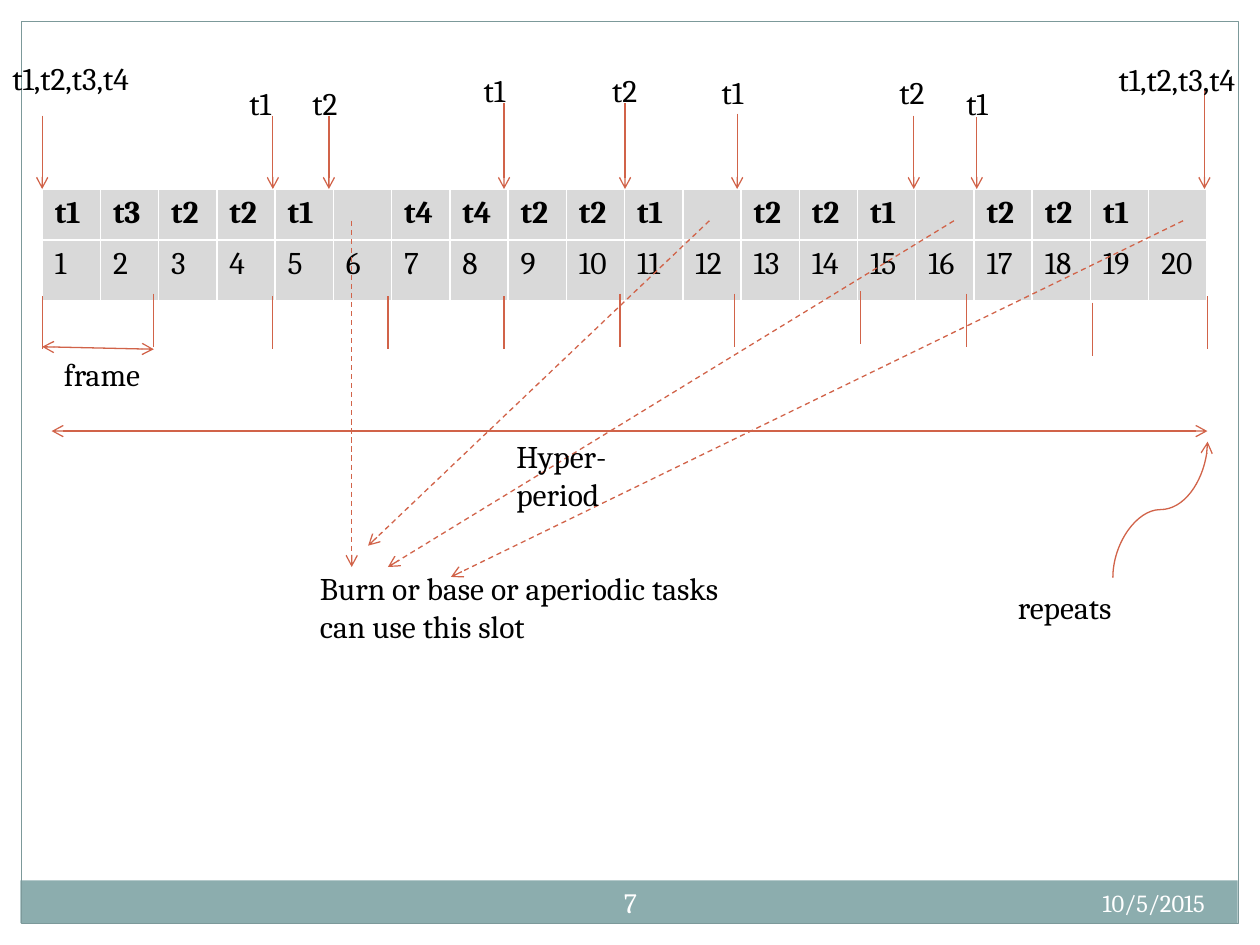
from typing import NamedTuple

from lxml.etree import SubElement
from pptx import Presentation
from pptx.dml.color import RGBColor
from pptx.enum.dml import MSO_LINE
from pptx.enum.shapes import MSO_CONNECTOR, MSO_SHAPE
from pptx.enum.text import MSO_ANCHOR, MSO_AUTO_SIZE, PP_ALIGN
from pptx.oxml.ns import qn
from pptx.shapes.connector import Connector
from pptx.slide import Slide
from pptx.text.text import TextFrame
from pptx.util import Cm, Pt

BLACK = RGBColor(0x00, 0x00, 0x00)
WHITE = RGBColor(0xFF, 0xFF, 0xFF)
CELL_GREY = RGBColor(0xD9, 0xD9, 0xD9)
ARROW_RED = RGBColor(0xD1, 0x63, 0x49)
BAND_TEAL = RGBColor(0x8C, 0xAD, 0xAE)
BORDER_TEAL = RGBColor(0x7C, 0x99, 0x9A)

FONT_FORMAT = {"name": "Cambria", "size": Pt(18), "bold": False}
LABEL_FORMAT = {"word_wrap": False, "auto_size": MSO_AUTO_SIZE.SHAPE_TO_FIT_TEXT}
FOOTER_FORMAT = {"word_wrap": True, "auto_size": MSO_AUTO_SIZE.NONE}

TABLE_LEFT, TABLE_TOP, TABLE_RIGHT = 0.85, 3.81, 24.34
SLOT_COUNT = 20
TICK_LENGTH = 1.07
SLOT_TASKS = {
    1: "t1", 2: "t3", 3: "t2", 4: "t2", 5: "t1", 7: "t4", 8: "t4", 9: "t2",
    10: "t2", 11: "t1", 13: "t2", 14: "t2", 15: "t1", 17: "t2", 18: "t2", 19: "t1",
}


class Label(NamedTuple):
    """A text with its box in centimetres."""
    text: str
    left: float
    top: float
    width: float
    height: float = 1.02


class Release(NamedTuple):
    """An arrow down to the table, marking tasks that become ready."""
    x: float
    top: float
    label: Label


class Line(NamedTuple):
    """A line in centimetres; head and tail are arrows at its start and end."""
    start: tuple[float, float]
    end: tuple[float, float]
    head: bool = False
    tail: bool = False
    dashed: bool = False
    kind: MSO_CONNECTOR = MSO_CONNECTOR.STRAIGHT


RELEASES = [
    Release(TABLE_LEFT, 2.33, Label("t1,t2,t3,t4", 0, 1.07, 3.1)),
    Release(5.5, 2.33, Label("t1", 4.78, 1.57, 1.04)),
    Release(6.63, 2.33, Label("t2", 6.05, 1.57, 1.04)),
    Release(10.16, 2.08, Label("t1", 9.5, 1.3, 1.04)),
    Release(12.6, 2.08, Label("t2", 12.09, 1.3, 1.04)),
    Release(14.86, 2.29, Label("t1", 14.3, 1.35, 1.04)),
    Release(18.42, 2.33, Label("t2", 17.88, 1.35, 1.04)),
    Release(19.69, 2.36, Label("t1", 19.23, 1.57, 1.04)),
    Release(24.28, 1.8, Label("t1,t2,t3,t4", 22.3, 1.09, 3.1)),
]
FRAME_TICKS = [
    (TABLE_LEFT, 5.97), (3.1, 5.92), (5.5, 5.97), (7.82, 5.97), (10.16, 5.97),
    (12.5, 5.92), (14.81, 5.92), (17.35, 5.87), (19.48, 5.92), (22.02, 6.1),
    (TABLE_RIGHT, 5.97),
]
SPANS = [
    Line((TABLE_LEFT, 6.99), (3.1, 7.04), head=True, tail=True),
    Line((1.04, 8.69), (TABLE_RIGHT, 8.69), head=True, tail=True),
]
FREE_SLOT_ARROWS = [
    Line((start_x, 4.45), end, tail=True, dashed=True)
    for start_x, end in [(7.09, (7.09, 11.43)), (14.3, (7.42, 11)),
                         (19.23, (7.82, 11.43)), (23.85, (9.09, 11.63))]
]
REPEAT_ARROW = Line((24.76, 11.23), (22.02, 9.32), tail=True, kind=MSO_CONNECTOR.CURVE)
CAPTIONS = [
    Label("frame", 1.04, 7.04, 2.06),
    Label("Hyper-period", 10.16, 8.69, 3.99),
    Label("repeats", 20.27, 11.73, 2.46),
    Label("Burn or base or aperiodic tasks\ncan use this slot", 6.2, 11.35, 8.56, 1.8),
]
DATE = Label("10/5/2015", 16.08, 17.78, 8.46)
PAGE_NUMBER = Label("7", 11.86, 17.58, 1.7, 1.22)


def apply_format(target: object, values: dict) -> None:
    for name, value in values.items():
        setattr(target, name, value)


def write_text(frame: TextFrame, text: str, color: RGBColor = BLACK,
               alignment: PP_ALIGN = PP_ALIGN.LEFT, **font_changes) -> None:
    frame.text = text
    for paragraph in frame.paragraphs:
        paragraph.alignment = alignment
        for run in paragraph.runs:
            apply_format(run.font, FONT_FORMAT | font_changes)
            run.font.color.rgb = color


def add_label(slide: Slide, label: Label, frame_format: dict, **text_format) -> TextFrame:
    box = slide.shapes.add_textbox(
        Cm(label.left), Cm(label.top), Cm(label.width), Cm(label.height))
    apply_format(box.text_frame, frame_format)
    write_text(box.text_frame, label.text, **text_format)
    return box.text_frame


def add_line(slide: Slide, line: Line) -> Connector:
    connector = slide.shapes.add_connector(
        line.kind, *(Cm(value) for value in line.start + line.end))
    connector.line.color.rgb = ARROW_RED
    connector.line.width = Pt(0.75)
    if line.dashed:
        connector.line.dash_style = MSO_LINE.DASH
    outline = connector.line._get_or_add_ln()
    for tag, wanted in (("a:headEnd", line.head), ("a:tailEnd", line.tail)):
        if wanted:
            SubElement(outline, qn(tag), type="arrow")
    SubElement(connector._element.spPr, qn("a:effectLst"))
    return connector


def add_background(slide: Slide) -> None:
    """Draw the footer band and the border of the slide."""
    band = slide.shapes.add_shape(
        MSO_SHAPE.RECTANGLE, Cm(0.41), Cm(17.75), Cm(24.54), Cm(0.86))
    band.fill.solid()
    band.fill.fore_color.rgb = BAND_TEAL
    band.line.fill.background()
    border = slide.shapes.add_shape(
        MSO_SHAPE.RECTANGLE, Cm(0.43), Cm(0.43), Cm(24.54), Cm(18.19))
    border.fill.background()
    border.line.color.rgb = BORDER_TEAL
    border.line.width = Pt(0.75)
    for shape in (band, border):
        shape.shadow.inherit = False


def add_schedule(slide: Slide) -> None:
    """Draw the table of slots with the task that runs in each."""
    graphic_frame = slide.shapes.add_table(
        2, SLOT_COUNT, Cm(TABLE_LEFT), Cm(TABLE_TOP),
        Cm(TABLE_RIGHT - TABLE_LEFT), Cm(2.79))
    table = graphic_frame.table
    for row, height in zip(table.rows, (0.69, 1.22)):
        row.height = Cm(height)
    graphic_frame.height = Cm(2.79)
    for slot in range(1, SLOT_COUNT + 1):
        for row_index, text in enumerate((SLOT_TASKS.get(slot, ""), str(slot))):
            cell = table.cell(row_index, slot - 1)
            cell.fill.solid()
            cell.fill.fore_color.rgb = CELL_GREY
            write_text(cell.text_frame, text, bold=row_index == 0)


def add_footer(slide: Slide) -> None:
    add_label(slide, DATE, FOOTER_FORMAT, color=WHITE,
              alignment=PP_ALIGN.RIGHT, size=Pt(14))
    margins = {f"margin_{side}": Cm(0.13) for side in ("left", "top", "right", "bottom")}
    add_label(slide, PAGE_NUMBER,
              FOOTER_FORMAT | margins | {"vertical_anchor": MSO_ANCHOR.MIDDLE},
              color=WHITE, alignment=PP_ALIGN.CENTER, size=Pt(16))


def main() -> None:
    presentation = Presentation()
    presentation.slide_width, presentation.slide_height = Cm(25.4), Cm(19.05)
    slide = presentation.slides.add_slide(presentation.slide_layouts[6])
    add_background(slide)
    add_schedule(slide)
    for release in RELEASES:
        add_line(slide, Line((release.x, release.top), (release.x, TABLE_TOP), tail=True))
        add_label(slide, release.label, LABEL_FORMAT)
    for x, top in FRAME_TICKS:
        add_line(slide, Line((x, top), (x, top + TICK_LENGTH)))
    for line in SPANS + FREE_SLOT_ARROWS:
        add_line(slide, line)
    add_line(slide, REPEAT_ARROW).rotation = 90
    for caption in CAPTIONS:
        add_label(slide, caption, LABEL_FORMAT)
    add_footer(slide)
    presentation.save("out.pptx")


if __name__ == "__main__":
    main()
